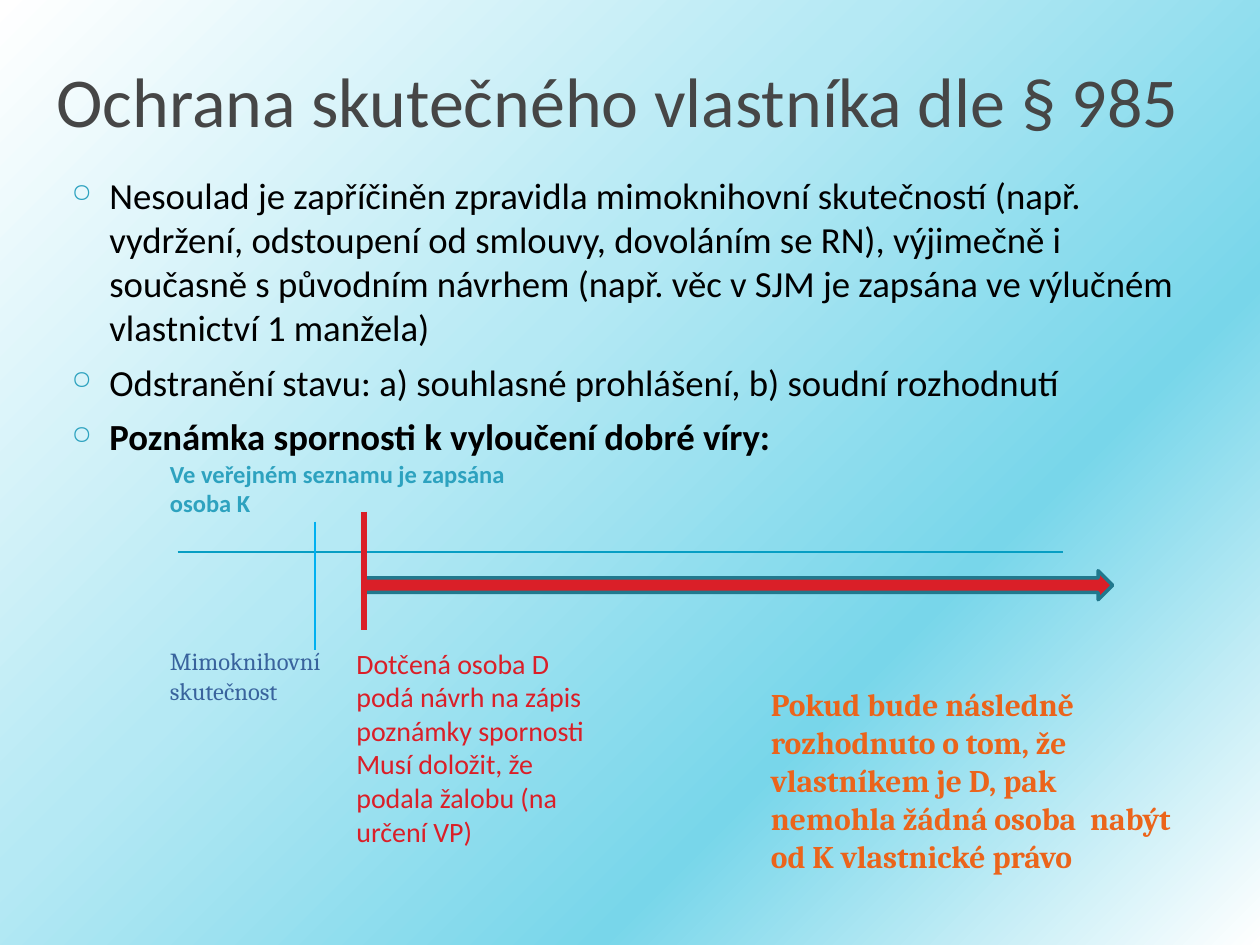
from lxml.etree import SubElement
from pptx import Presentation
from pptx.dml.color import RGBColor
from pptx.enum.shapes import MSO_CONNECTOR, MSO_SHAPE
from pptx.enum.text import MSO_ANCHOR, MSO_AUTO_SIZE, PP_ALIGN
from pptx.oxml.ns import qn
from pptx.util import Inches, Pt

COLORS = {
    "title": "464646", "body": "000000", "accent": "2DA2BF",
    "timeline": "079EC3", "event": "00B0F0", "red": "DA1F28",
    "arrow_outline": "21788D", "orange": "EB641B", "blue": "39639D",
}
BACKGROUND_STOPS = [(0, "FFFFFF"), (40, "B5E9F4"), (70, "78D6EA"), (100, "FFFFFF")]


def rgb(name):
    return RGBColor.from_string(COLORS[name])


def place(shape, box):
    shape.left, shape.top, shape.width, shape.height = map(Inches, box)


def add_run(paragraph, text, size, color, font="Calibri", bold=False):
    run = paragraph.add_run()
    run.text = text
    run.font.name = font
    run.font.size = Pt(size)
    run.font.bold = bold
    run.font.color.rgb = rgb(color)


def add_text(slide, box, paragraphs, size, color, font="Calibri", bold=False):
    shape = slide.shapes.add_textbox(*map(Inches, box))
    frame = shape.text_frame
    frame.word_wrap = True
    for index, text in enumerate(paragraphs):
        paragraph = frame.paragraphs[0] if index == 0 else frame.add_paragraph()
        add_run(paragraph, text, size, color, font, bold)


def add_line(slide, start, end, color, width):
    line = slide.shapes.add_connector(
        MSO_CONNECTOR.STRAIGHT, *map(Inches, (*start, *end)))
    line.line.color.rgb = rgb(color)
    line.line.width = Pt(width)
    SubElement(line.element.spPr, qn("a:effectLst"))


def set_background(slide):
    fill = slide.background.fill
    fill.gradient()
    fill.gradient_angle = 315
    stops = next(slide.element.iter(qn("a:gsLst")))
    for stop in list(stops):
        stops.remove(stop)
    for position, color in BACKGROUND_STOPS:
        stop = SubElement(stops, qn("a:gs"), pos=str(position * 1000))
        SubElement(stop, qn("a:srgbClr"), val=color)


def add_title(slide, box, text):
    title = slide.shapes.title
    place(title, box)
    frame = title.text_frame
    frame.auto_size = MSO_AUTO_SIZE.NONE
    frame.vertical_anchor = MSO_ANCHOR.BOTTOM
    paragraph = frame.paragraphs[0]
    paragraph.alignment = PP_ALIGN.LEFT
    add_run(paragraph, text, 40, "title")


def add_bullets(slide, box, items):
    frame = slide.shapes.add_textbox(*map(Inches, box)).text_frame
    frame.word_wrap = True
    for index, (text, bold) in enumerate(items):
        paragraph = frame.paragraphs[0] if index == 0 else frame.add_paragraph()
        paragraph.space_before = Pt(6)
        add_run(paragraph, text, 21, "body", bold=bold)
        properties = paragraph._p.get_or_add_pPr()
        properties.set("marL", str(Inches(0.3)))
        properties.set("indent", str(-Inches(0.3)))
        bullet_color = SubElement(properties, qn("a:buClr"))
        SubElement(bullet_color, qn("a:srgbClr"), val=COLORS["accent"])
        SubElement(properties, qn("a:buSzPct"), val="70000")
        SubElement(properties, qn("a:buChar"), char="○")


def add_timeline(slide, box):
    left, top, width, height = box

    # Time axis and the event outside the register
    add_line(slide, (left + 0.16, top + 0.79), (left + 7.19, top + 0.79), "timeline", 1)
    add_line(slide, (left + 1.25, top + 0.55), (left + 1.25, top + 1.57), "event", 1)

    # Period covered by the dispute note
    note_x = left + 1.64
    arrow = slide.shapes.add_shape(
        MSO_SHAPE.RIGHT_ARROW,
        *map(Inches, (note_x, top + 0.94, left + width - note_x, 0.23)))
    arrow.shadow.inherit = False
    arrow.fill.solid()
    arrow.fill.fore_color.rgb = rgb("red")
    arrow.line.color.rgb = rgb("arrow_outline")
    arrow.line.width = Pt(2)
    add_line(slide, (note_x, top + 0.47), (note_x, top + 1.41), "red", 3)

    # Captions
    caption_y = top + 1.49
    add_text(slide, (left, top, 2.89, 0.57),
             ["Ve veřejném seznamu je zapsána osoba K"], 14, "accent", bold=True)
    add_text(slide, (left, caption_y, 1.64, 0.57),
             ["Mimoknihovní", "skutečnost"], 14, "blue", "Cambria")
    add_text(slide, (left + 1.48, caption_y, 2.11, 1.72),
             ["Dotčená osoba D podá návrh na zápis poznámky spornosti",
              "Musí doložit, že podala žalobu (na určení VP)"], 16, "red")
    add_text(slide, (left + 4.77, top + 1.8, 3.48, height - 1.8),
             ["Pokud bude následně rozhodnuto o tom, že vlastníkem je D, pak "
              "nemohla žádná osoba  nabýt od K vlastnické právo"],
             18, "orange", "Cambria", bold=True)


def main():
    presentation = Presentation()
    presentation.slide_width = Inches(10)
    presentation.slide_height = Inches(7.5)
    slide = presentation.slides.add_slide(presentation.slide_layouts[5])
    set_background(slide)
    add_title(slide, (0.35, 0.32, 9.15, 0.85), "Ochrana skutečného vlastníka dle § 985")
    add_bullets(slide, (0.47, 1.32, 9.03, 2.2), [
        ("Nesoulad je zapříčiněn zpravidla mimoknihovní skutečností (např. "
         "vydržení, odstoupení od smlouvy, dovoláním se RN), výjimečně i "
         "současně s původním návrhem (např. věc v SJM je zapsána ve výlučném "
         "vlastnictví 1 manžela)", False),
        ("Odstranění stavu: a) souhlasné prohlášení, b) soudní rozhodnutí", False),
        ("Poznámka spornosti k vyloučení dobré víry:", True),
    ])
    add_timeline(slide, (1.25, 3.59, 7.58, 3.72))
    presentation.save("out.pptx")


if __name__ == "__main__":
    main()
